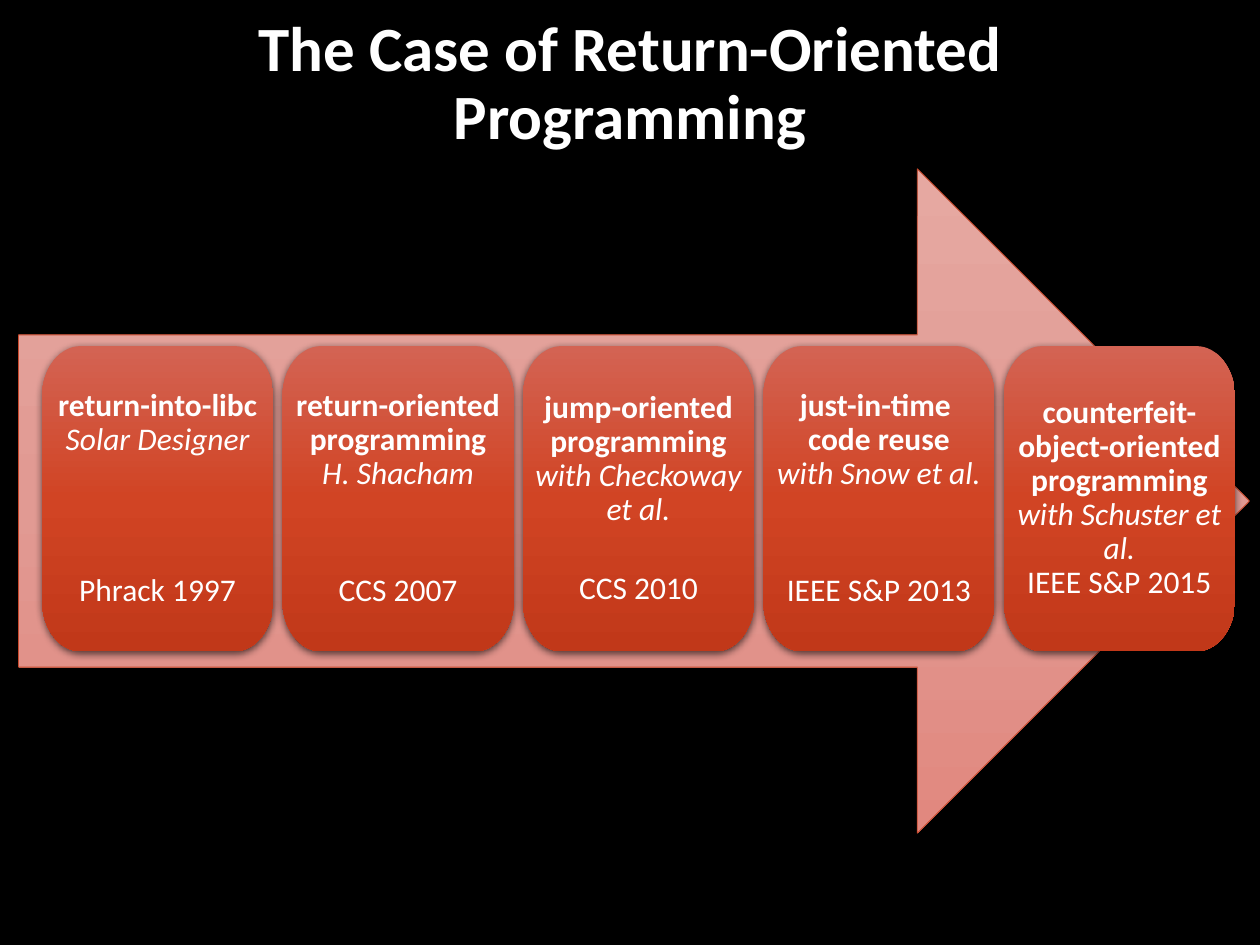
"""Build a slide with a timeline of return-oriented programming research."""
from copy import deepcopy
from dataclasses import dataclass

from lxml import etree
from pptx import Presentation
from pptx.dml.color import RGBColor
from pptx.enum.shapes import MSO_SHAPE
from pptx.enum.text import MSO_ANCHOR, PP_ALIGN
from pptx.oxml.ns import qn
from pptx.util import Pt

ARROW = MSO_SHAPE.RIGHT_ARROW
MIDDLE = MSO_ANCHOR.MIDDLE
CENTER = PP_ALIGN.CENTER

TITLE = "The Case of Return-Oriented Programming"
MILESTONES = [
    ("return-into-libc", "Solar Designer", "Phrack 1997", 67),
    ("return-oriented programming", "H. Shacham", "CCS 2007", 47),
    ("jump-oriented programming", "with Checkoway et al.", "CCS 2010", 26),
    ("just-in-time \vcode reuse", "with Snow et al.", "IEEE S&P 2013", 47),
    ("counterfeit-object-oriented programming", "with Schuster et al.",
     "IEEE S&P 2015", 0),
]


@dataclass(frozen=True)
class Theme:
    """Colours, font and type sizes."""
    font: str = "Calibri"
    background: str = "000000"
    text: str = "FFFFFF"
    arrow: tuple = ("E6A8A1", "E19A93", "E1887F")
    arrow_line: str = "C9492C"
    card: tuple = ("D36353", "D14424", "C13819")
    shadow: str = "000000"
    title_size: int = 36
    card_size: int = 18


THEME = Theme()
TITLE_BOX = (36.3, 18.7, 647.3, 59.8)
ARROW_BOX = (10.6, 96.5, 703.4, 379.6)
CARD_LEFT, CARD_TOP, CARD_W, CARD_H = 24, 197.8, 132.2, 174.4
CARD_PITCH = 137.4
CORNER_W, CORNER_H = 22, 29
ARC = 0.55


def color(value):
    return RGBColor.from_string(value)


def fill_gradient(sp, colors):
    sp.fill.gradient()
    sp.fill.gradient_angle = 270
    stops = sp._element.spPr.find(".//" + qn("a:gsLst"))
    stops.append(deepcopy(stops[0]))
    for i, (stop, value) in enumerate(zip(sp.fill.gradient_stops, colors)):
        stop.position = i / (len(colors) - 1)
        stop.color.rgb = color(value)


def add_shadow(sp):
    effects = sp._element.spPr.find(qn("a:effectLst"))
    outer = etree.SubElement(
        effects, qn("a:outerShdw"), blurRad=str(Pt(4.5)), dist=str(Pt(1.5)),
        dir="5400000", algn="ctr", rotWithShape="0")
    shade = etree.SubElement(outer, qn("a:srgbClr"), val=THEME.shadow)
    etree.SubElement(shade, qn("a:alpha"), val="63000")


def style_paragraph(p, size):
    p.alignment = CENTER
    p.line_spacing = 0.9
    for r in p.runs:
        r.font.name = THEME.font
        r.font.size = Pt(size)
        r.font.color.rgb = color(THEME.text)


def round_corners(sp):
    lines = sp._element.spPr.findall(".//" + qn("a:lnTo"))
    start = sp._element.spPr.find(".//" + qn("a:moveTo"))
    for i, (before, line) in enumerate(zip([start] + lines, lines)):
        if i % 2:
            continue
        x0, y0 = (int(before[0].get(k)) for k in "xy")
        x1, y1 = (int(line[0].get(k)) for k in "xy")
        cx, cy = (x0, y1) if i % 4 == 0 else (x1, y0)
        line.tag = qn("a:cubicBezTo")
        for j, (x, y) in enumerate([(x0, y0), (x1, y1)]):
            line.insert(j, etree.Element(
                qn("a:pt"), x=str(round(x + (cx - x) * ARC)),
                y=str(round(y + (cy - y) * ARC))))


def add_card_shape(s, left):
    right, bottom = left + CARD_W, CARD_TOP + CARD_H
    x0, x1 = left + CORNER_W, right - CORNER_W
    y0, y1 = CARD_TOP + CORNER_H, bottom - CORNER_H
    first, *rest = [
        (Pt(x), Pt(y)) for x, y in [
            (left, y0), (x0, CARD_TOP), (x1, CARD_TOP), (right, y0),
            (right, y1), (x1, bottom), (x0, bottom), (left, y1)]
    ]
    builder = s.shapes.build_freeform(*first)
    builder.add_line_segments(rest, close=False)
    builder.add_line_segments([first], close=True)
    sp = builder.convert_to_shape()
    outline = sp._element.spPr.findall(".//" + qn("a:lnTo"))
    for extra in outline[len(rest) + 1:]:
        extra.getparent().remove(extra)
    round_corners(sp)
    return sp


def add_card(s, left, name, author, venue, gap):
    sp = add_card_shape(s, left)
    sp.shadow.inherit = False
    add_shadow(sp)
    fill_gradient(sp, THEME.card)
    sp.line.fill.background()

    tf = sp.text_frame
    tf.word_wrap = True
    tf.vertical_anchor = MIDDLE
    tf.margin_left = tf.margin_right = 0
    tf.margin_top = tf.margin_bottom = Pt(10.8)
    heading = f"{name}\v{author}"
    tf.text = f"{heading}\n{venue}" if gap else f"{heading}\v{venue}"
    for p in tf.paragraphs:
        style_paragraph(p, THEME.card_size)
    if gap:
        tf.paragraphs[0].space_after = Pt(gap)
    *name_runs, author_run, _ = [r for p in tf.paragraphs for r in p.runs]
    for r in name_runs:
        r.font.bold = True
    author_run.font.italic = True


prs = Presentation()
prs.slide_width, prs.slide_height = Pt(720), Pt(540)
s = prs.slides.add_slide(prs.slide_layouts[6])
s.background.fill.solid()
s.background.fill.fore_color.rgb = color(THEME.background)

title = s.shapes.add_textbox(*map(Pt, TITLE_BOX))
tf = title.text_frame
tf.word_wrap = True
tf.vertical_anchor = MIDDLE
tf.text = TITLE
style_paragraph(tf.paragraphs[0], THEME.title_size)
tf.paragraphs[0].runs[0].font.bold = True

arrow = s.shapes.add_shape(ARROW, *map(Pt, ARROW_BOX))
arrow.shadow.inherit = False
fill_gradient(arrow, THEME.arrow)
arrow.line.color.rgb = color(THEME.arrow_line)
arrow.line.width = Pt(0.5)

for i, milestone in enumerate(MILESTONES):
    add_card(s, CARD_LEFT + i * CARD_PITCH, *milestone)

prs.save("out.pptx")
